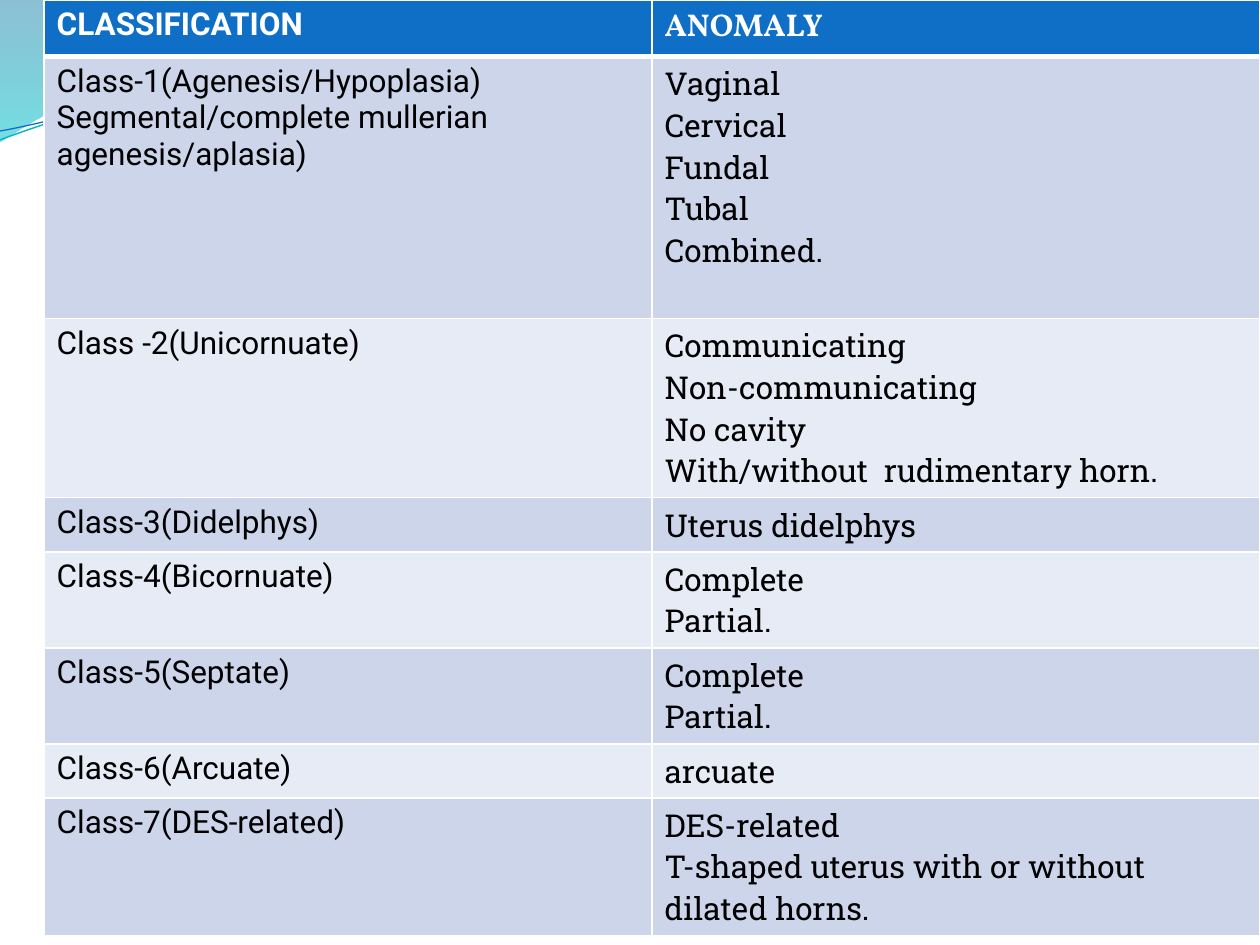
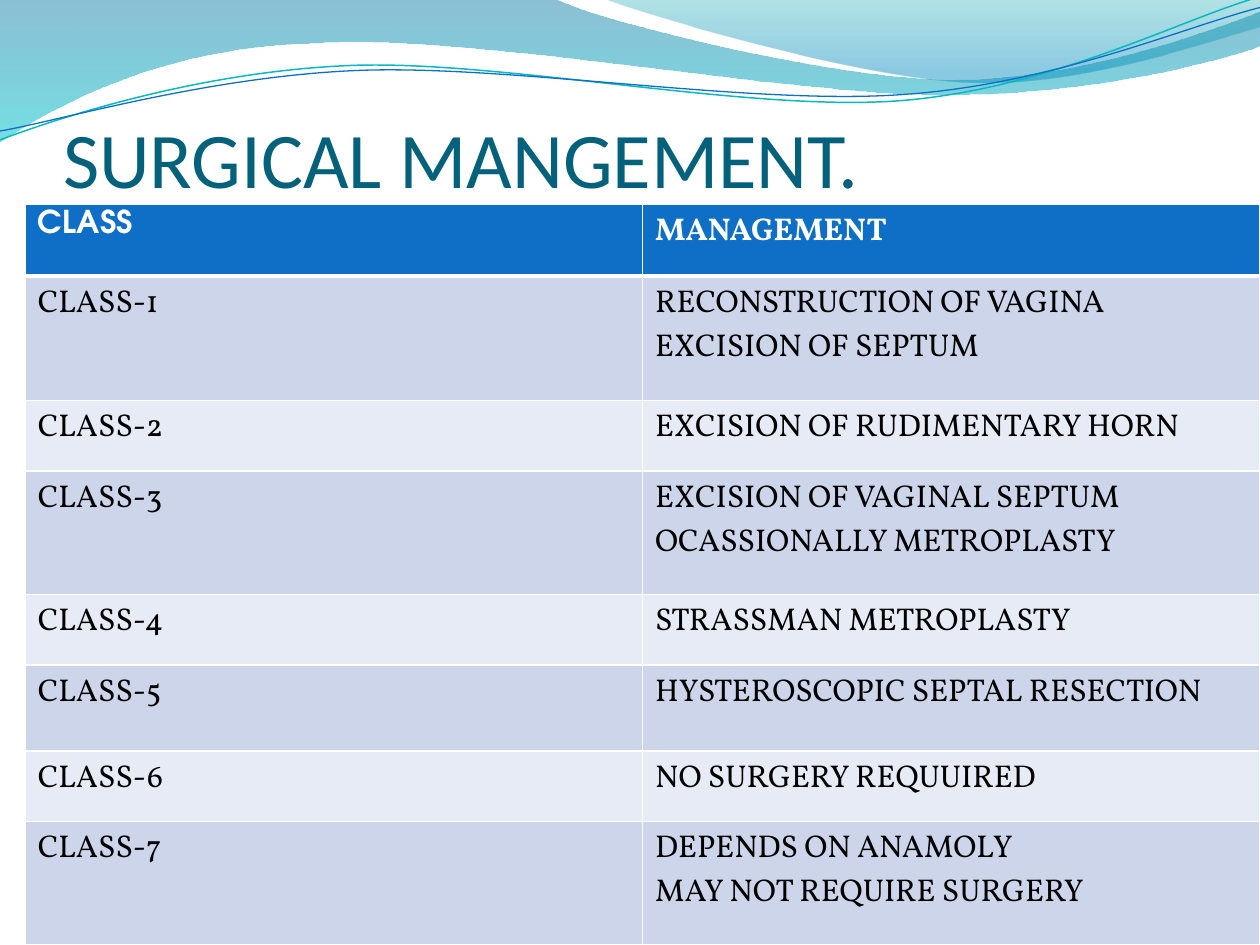
import math

import pptx
import pptx.dml.color
import pptx.enum.text
import pptx.oxml
import pptx.oxml.ns
import pptx.util

Inches = pptx.util.Inches
RGBColor = pptx.dml.color.RGBColor
qn = pptx.oxml.ns.qn
DRAWING = pptx.oxml.ns.nsdecls("a")

COLORS = {
    "white": "FFFFFF",
    "black": "000000",
    "title": "04617B",
    "header": "0F6FC6",
    "odd row": "CCD5EA",
    "even row": "E7EBF5",
    "teal line": "0AB8BF",
    "blue line": "0F6FC6",
    "deep blue": "0074A1",
    "aqua": "00C6CF",
    "teal": "00A1A9",
    "sky": "008BBF",
}
LINE_TILT = 357.3

# Each wave: start point, segments (2 numbers = line, 6 = Bezier curve),
# then gradient stops (position, colour, opacity), or an outline
# (colour, width) with the centre it is tilted around
WAVES = [
    {
        "start": (0, 0),
        "segments": [
            (4.4, -0.01),
            (4.76, 0.17, 6.64, 0.63, 7.58, 0.63),
            (8.53, 0.63, 9.58, 0.26, 10, 0.09),
            (10.01, 0.36),
            (9.83, 0.44, 8.7, 0.76, 7.46, 0.75),
            (6.22, 0.75, 3.82, 0.28, 2.57, 0.34),
            (1.29, 0.36, 0.46, 0.83, -0.01, 1.13),
            (0, 0),
        ],
        "gradient": [(0, "deep blue", 45), (1, "aqua", 55)],
    },
    {
        "start": (4.79, -0.01),
        "segments": [
            (5.09, 0.11, 6.82, 0.62, 7.69, 0.65),
            (8.56, 0.69, 9.61, 0.32, 10, 0.21),
            (10, 0),
            (4.79, -0.01),
        ],
        "gradient": [(0, "teal", 30), (0.8, "sky", 45)],
    },
    {
        "start": (0, 1.11),
        "segments": [
            (0.48, 0.93, 1.58, 0.57, 2.77, 0.52),
            (3.95, 0.47, 5.93, 0.89, 7.13, 0.8),
            (8.33, 0.71, 9.38, 0.15, 9.98, -0.02),
        ],
        "outline": ("teal line", 0.85),
        "centre": (4.99, 0.58),
    },
    {
        "start": (0, 1.04),
        "segments": [
            (0.47, 0.96, 1.64, 0.61, 2.83, 0.56),
            (4.03, 0.51, 5.97, 0.84, 7.17, 0.75),
            (8.36, 0.67, 9.41, 0.21, 10, 0.06),
        ],
        "outline": ("blue line", 0.75),
        "centre": (5, 0.59),
    },
]

SLIDES = [
    {
        "title": None,
        "table at": (0.35, 0, 9.65),
        "row heights": [0.43, 2.08, 1.39, 0.43, 0.75, 0.75, 0.43, 1.07],
        "header fonts": ("Roboto", "Vollkorn"),
        "body fonts": ("Roboto", "Roboto Slab"),
        "rows": [
            ("CLASSIFICATION", "ANOMALY"),
            ("Class-1(Agenesis/Hypoplasia)\nSegmental/complete mullerian agenesis/aplasia)",
             "Vaginal\nCervical\nFundal\nTubal\nCombined."),
            ("Class -2(Unicornuate)",
             "Communicating\nNon-communicating\nNo cavity\nWith/without  rudimentary horn."),
            ("Class-3(Didelphys)", "Uterus didelphys"),
            ("Class-4(Bicornuate)", "Complete\nPartial."),
            ("Class-5(Septate)", "Complete\nPartial."),
            ("Class-6(Arcuate)", "arcuate"),
            ("Class-7(DES-related)",
             "DES-related\nT-shaped uterus with or without dilated horns."),
        ],
    },
    {
        "title": "SURGICAL MANGEMENT.",
        "table at": (0.2, 1.62, 9.8),
        "row heights": [0.57, 0.99, 0.56, 0.98, 0.56, 0.68, 0.56, 0.98],
        "header fonts": ("TeX Gyre Adventor", "Vollkorn"),
        "body fonts": ("Vollkorn", "Vollkorn"),
        "rows": [
            ("CLASS", "MANAGEMENT"),
            ("CLASS-1", "RECONSTRUCTION OF VAGINA\nEXCISION OF SEPTUM"),
            ("CLASS-2", "EXCISION OF RUDIMENTARY HORN"),
            ("CLASS-3", "EXCISION OF VAGINAL SEPTUM\nOCASSIONALLY METROPLASTY"),
            ("CLASS-4", "STRASSMAN METROPLASTY"),
            ("CLASS-5", "HYSTEROSCOPIC SEPTAL RESECTION"),
            ("CLASS-6", "NO SURGERY REQUUIRED"),
            ("CLASS-7", "DEPENDS ON ANAMOLY\nMAY NOT REQUIRE SURGERY"),
        ],
    },
]


def write_text(text_frame, text, font, size=18, color="black", bold=False):
    text_frame.text = text
    for paragraph in text_frame.paragraphs:
        paragraph.alignment = pptx.enum.text.PP_ALIGN.LEFT
        for run in paragraph.runs:
            run.font.name = font
            run.font.size = pptx.util.Pt(size)
            run.font.bold = bold
            run.font.color.rgb = RGBColor.from_string(COLORS[color])


def turn_back(point, centre):
    """Undo the tilt of a point, since the shape's rotation adds it again."""
    angle = math.radians(360 - LINE_TILT)
    dx, dy = point[0] - centre[0], point[1] - centre[1]
    return (centre[0] + dx * math.cos(angle) - dy * math.sin(angle),
            centre[1] + dx * math.sin(angle) + dy * math.cos(angle))


presentation = pptx.Presentation()
presentation.slide_width = Inches(10)
presentation.slide_height = Inches(7.5)
title_only_layout, blank_layout = presentation.slide_layouts[5], presentation.slide_layouts[6]
slides = [presentation.slides.add_slide(title_only_layout if content["title"] else blank_layout)
          for content in SLIDES]

# Background and wave band, drawn once and moved to the master
master = presentation.slide_master
master.background.fill.solid()
master.background.fill.fore_color.rgb = RGBColor.from_string(COLORS["white"])
for wave_index, wave in enumerate(WAVES):
    points = [wave["start"]]
    for segment in wave["segments"]:
        points += zip(segment[::2], segment[1::2])
    if "centre" in wave:
        points = [turn_back(point, wave["centre"]) for point in points]
    points = [(Inches(x), Inches(y)) for x, y in points]
    builder = slides[0].shapes.build_freeform(*points[0])
    builder.add_line_segments(points[1:], close="gradient" in wave)
    shape = builder.convert_to_shape()
    shape.shadow.inherit = False

    # Join each three control points into one curve
    outline = next(shape._element.iter(qn("a:path")))
    corners = iter(outline.findall(qn("a:lnTo")))
    for segment in wave["segments"]:
        corner = next(corners)
        if len(segment) == 6:
            curve = pptx.oxml.parse_xml(f"<a:cubicBezTo {DRAWING}/>")
            corner.addprevious(curve)
            for control in (corner, next(corners), next(corners)):
                curve.append(control[0])
                outline.remove(control)

    if "gradient" in wave:
        shape.line.fill.background()
        shape.fill.gradient()
        shape.fill.gradient_angle = 270
        color_elements = shape._element.spPr.iter(qn("a:gs"))
        for stop, element, (position, color, opacity) in zip(
                shape.fill.gradient_stops, color_elements, wave["gradient"]):
            stop.position = position
            stop.color.rgb = RGBColor.from_string(COLORS[color])
            element[0].append(pptx.oxml.parse_xml(f'<a:alpha {DRAWING} val="{opacity * 1000}"/>'))
    else:
        color, width = wave["outline"]
        shape.rotation = LINE_TILT
        shape.fill.background()
        shape.line.color.rgb = RGBColor.from_string(COLORS[color])
        shape.line.width = pptx.util.Pt(width)
    shape._element.nvSpPr.cNvPr.set("id", str(100 + wave_index))
    master.shapes._spTree.insert(2 + wave_index, shape._element)

for slide, content in zip(slides, SLIDES):
    # Title
    if content["title"]:
        title = slide.shapes.title
        title.left, title.top = Inches(0.5), Inches(0.77)
        title.width, title.height = Inches(9), Inches(0.85)
        frame = title.text_frame
        frame.auto_size = pptx.enum.text.MSO_AUTO_SIZE.NONE
        frame.vertical_anchor = pptx.enum.text.MSO_ANCHOR.BOTTOM
        frame.margin_left = frame.margin_right = frame.margin_bottom = 0
        frame.margin_top = Inches(0.05)
        write_text(frame, content["title"], "Calibri", size=45, color="title")

    # Table
    left, top, width = content["table at"]
    heights = content["row heights"]
    table = slide.shapes.add_table(len(heights), 2, Inches(left), Inches(top),
                                   Inches(width), Inches(sum(heights))).table
    table.horz_banding = False
    for row, height in zip(table.rows, heights):
        row.height = Inches(height)

    for row_index, row_texts in enumerate(content["rows"]):
        is_header = row_index == 0
        fonts = content["header fonts" if is_header else "body fonts"]
        fill = "header" if is_header else "odd row" if row_index % 2 else "even row"
        border_widths = {"L": 1, "R": 1, "T": 3 if row_index == 1 else 1, "B": 3 if is_header else 1}
        for column_index, text in enumerate(row_texts):
            cell = table.cell(row_index, column_index)
            write_text(cell.text_frame, text, fonts[column_index],
                       color="white" if is_header else "black", bold=is_header)
            cell.fill.solid()
            cell.fill.fore_color.rgb = RGBColor.from_string(COLORS[fill])
            cell_properties = cell._tc.get_or_add_tcPr()
            for order, (side, points) in enumerate(border_widths.items()):
                cell_properties.insert(order, pptx.oxml.parse_xml(
                    f'<a:ln{side} {DRAWING} w="{pptx.util.Pt(points)}"><a:solidFill>'
                    f'<a:srgbClr val="{COLORS["white"]}"/></a:solidFill></a:ln{side}>'))

presentation.save("out.pptx")
